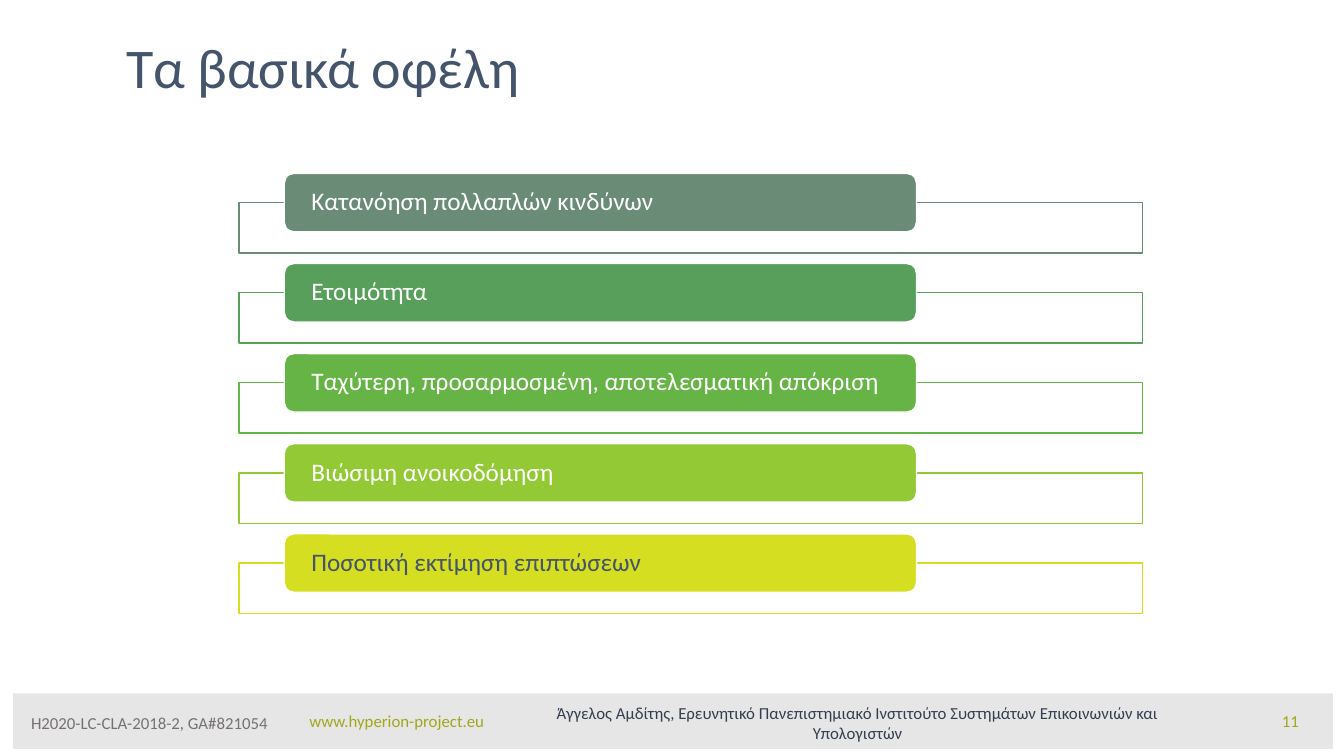
"""Build the slide listing the five basic benefits of the project."""
from pptx import Presentation
from pptx.dml.color import RGBColor
from pptx.enum.shapes import MSO_SHAPE
from pptx.enum.text import MSO_ANCHOR, PP_ALIGN
from pptx.util import Inches, Pt

RECTANGLE, ROUNDED = MSO_SHAPE.RECTANGLE, MSO_SHAPE.ROUNDED_RECTANGLE
TOP, MIDDLE = MSO_ANCHOR.TOP, MSO_ANCHOR.MIDDLE
LEFT, CENTER, RIGHT = PP_ALIGN.LEFT, PP_ALIGN.CENTER, PP_ALIGN.RIGHT

WHITE = RGBColor(0xFF, 0xFF, 0xFF)
SLATE = RGBColor(0x44, 0x54, 0x6A)
NAVY = RGBColor(0x33, 0x3F, 0x50)
GRAY = RGBColor(0x76, 0x71, 0x71)
LIGHT_GRAY = RGBColor(0xE7, 0xE6, 0xE6)
OLIVE = RGBColor(0xA1, 0xA7, 0x19)
SAGE = RGBColor(0x6A, 0x8B, 0x76)
GREEN = RGBColor(0x58, 0x9F, 0x5B)
LEAF = RGBColor(0x67, 0xB4, 0x46)
LIME = RGBColor(0x92, 0xC9, 0x34)
YELLOW = RGBColor(0xD6, 0xDE, 0x22)


def write(shape, text, size=12, color=SLATE, align=LEFT, anchor=MIDDLE,
          inset=0.1, spacing=1.0):
    """Put one formatted paragraph into a shape."""
    frame = shape.text_frame
    frame.word_wrap = True
    frame.vertical_anchor = anchor
    frame.margin_left = frame.margin_right = Inches(inset)
    paragraph = frame.paragraphs[0]
    paragraph.text = text
    paragraph.alignment = align
    paragraph.line_spacing = spacing
    paragraph.font.name = "Calibri"
    paragraph.font.size = Pt(size)
    paragraph.font.color.rgb = color


def add_box(kind, left, top, width, height, fill, line=None):
    """Add a flat filled shape, outlined when a line colour is given."""
    box = slide.shapes.add_shape(
        kind, Inches(left), Inches(top), Inches(width), Inches(height))
    box.shadow.inherit = False
    box.fill.solid()
    box.fill.fore_color.rgb = fill
    if line is None:
        box.line.fill.background()
    else:
        box.line.color.rgb = line
        box.line.width = Pt(1)
    return box


prs = Presentation()
prs.slide_width, prs.slide_height = Inches(13.33), Inches(7.5)
slide = prs.slides.add_slide(prs.slide_layouts[5])

title = slide.shapes.title
title.left, title.top = Inches(1.15), Inches(0.16)
title.width, title.height = Inches(11.63), Inches(1.08)
write(title, "Τα βασικά οφέλη", size=40, spacing=0.9)

add_box(RECTANGLE, 0.13, 6.88, 13.09, 0.55, LIGHT_GRAY)
footer_parts = [
    ("H2020-LC-CLA-2018-2, GA#821054", 0.21, 7.02, 2.67, 0.3, GRAY, LEFT, TOP),
    ("www.hyperion-project.eu", 2.97, 7, 2.13, 0.3, OLIVE, LEFT, TOP),
    ("Άγγελος Αμδίτης, Ερευνητικό Πανεπιστημιακό Ινστιτούτο Συστημάτων "
     "Επικοινωνιών και Υπολογιστών", 5.07, 6.95, 6.87, 0.44, NAVY, CENTER, MIDDLE),
    ("11", 12.08, 6.95, 0.9, 0.4, OLIVE, RIGHT, MIDDLE),
]
for text, left, top, width, height, color, align, anchor in footer_parts:
    footer = slide.shapes.add_textbox(
        Inches(left), Inches(top), Inches(width), Inches(height))
    write(footer, text, color=color, align=align, anchor=anchor)

benefits = [
    ("Κατανόηση πολλαπλών κινδύνων", SAGE, WHITE),
    ("Ετοιμότητα", GREEN, WHITE),
    ("Ταχύτερη, προσαρμοσμένη, αποτελεσματική απόκριση", LEAF, WHITE),
    ("Βιώσιμη ανοικοδόμηση", LIME, WHITE),
    ("Ποσοτική εκτίμηση επιπτώσεων", YELLOW, SLATE),
]
FIRST_TOP, ROW_PITCH = 1.72, 0.894
for row, (benefit, color, text_color) in enumerate(benefits):
    top = FIRST_TOP + row * ROW_PITCH
    add_box(RECTANGLE, 2.37, top + 0.29, 8.96, 0.5, WHITE, line=color)
    label = add_box(ROUNDED, 2.82, top, 6.27, 0.58, color, line=WHITE)
    write(label, benefit, size=18, color=text_color, inset=0.24, spacing=0.9)

prs.save("out.pptx")
